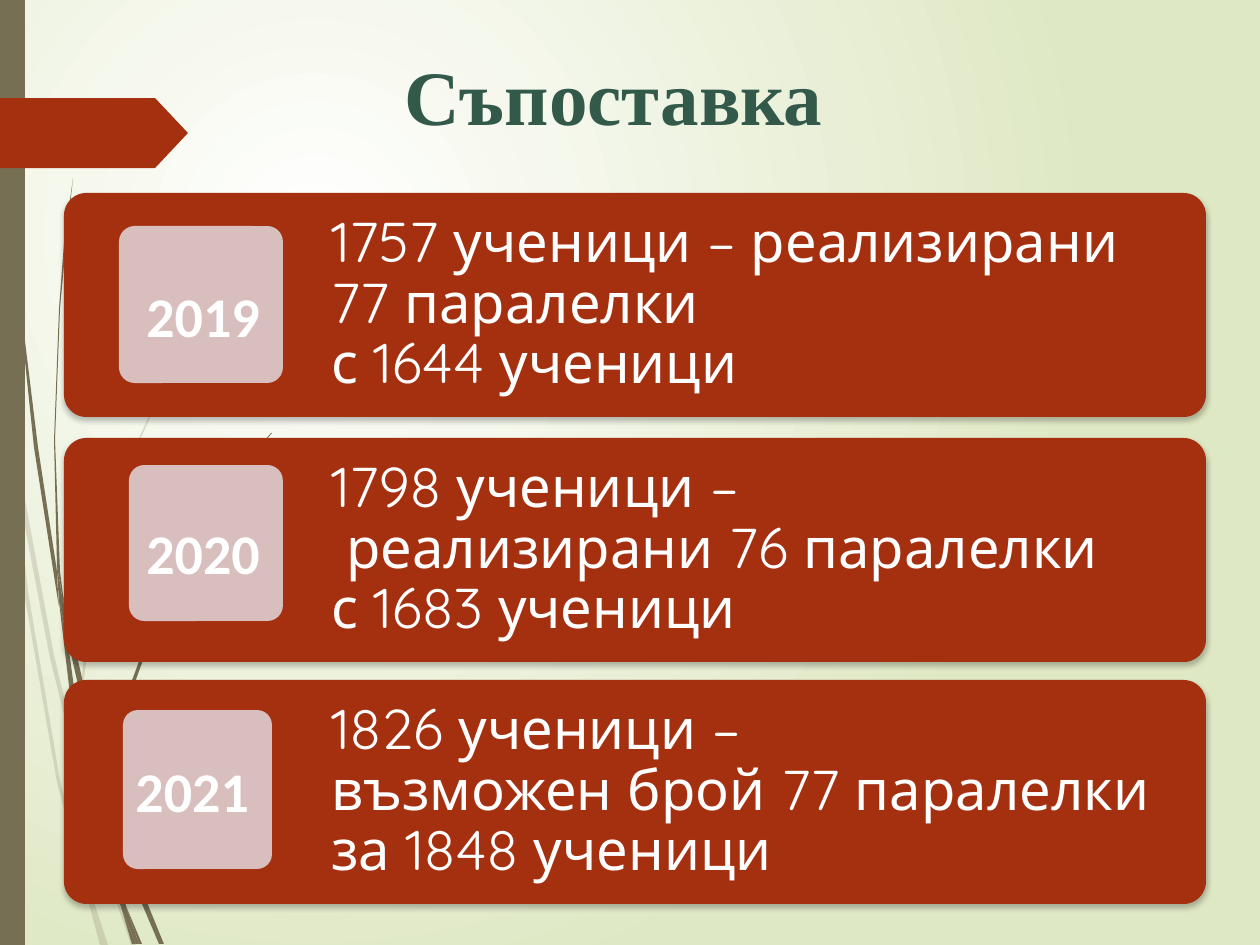
from dataclasses import dataclass

from lxml.etree import SubElement
from pptx import Presentation
from pptx.dml.color import RGBColor as RGB
from pptx.enum.shapes import MSO_SHAPE as Shape
from pptx.enum.text import MSO_ANCHOR as Anchor
from pptx.oxml import parse_xml
from pptx.oxml.ns import nsdecls, qn
from pptx.util import Emu, Pt

SCALE = 914400 / 126  # EMU per px
WIDTH, HEIGHT = 1260, 945


@dataclass(frozen=True)
class Theme:
    accent: str = "A53010"
    bark: str = "766F54"
    tile: str = "D8BEBD"
    title: str = "325949"
    light: str = "FFFFFF"
    meadow: str = "DFE8C4"
    title_font: str = "Times New Roman"
    body_font: str = "Quicksand"
    year_font: str = "Calibri"
    title_size: int = 44
    body_size: int = 32


THEME = Theme()

FAINT_STEMS = [
    [(10, 441), (8, 406), (0, 355), (0, 377), (9, 433)],
    [(50, 658), (74, 755), (74, 738), (54, 655), (13, 435), (15, 474)],
    [(81, 765), (77, 751), (77, 769), (107, 874), (131, 945), (136, 945), (111, 872)],
    [(105, 945), (108, 945), (92, 896)],
    [(81, 861), (60, 780), (28, 591), (15, 474), (10, 441), (24, 592), (57, 782),
     (81, 873), (88, 900), (87, 891)],
    [(77, 736), (96, 582), (140, 440), (200, 309), (236, 249), (253, 220), (273, 194),
     (273, 193), (253, 219), (234, 248), (199, 307), (139, 438), (94, 581), (74, 736),
     (74, 738), (77, 751)],
    [(88, 900), (100, 945), (103, 945)],
    [(84, 872), (82, 861), (87, 891), (88, 900), (103, 945), (105, 945), (92, 896)],
]
DARK_STEMS = [
    [(6, 139), (18, 294), (34, 447), (58, 601), (59, 606), (57, 576), (57, 571),
     (38, 447), (19, 292), (8, 137), (5, 60), (4, 0), (3, 0), (4, 60)],
    [(92, 746), (111, 813), (111, 795), (97, 743), (63, 595), (67, 636)],
    [(118, 818), (115, 808), (115, 827), (137, 892), (159, 944), (164, 944), (142, 890)],
    [(115, 871), (102, 828), (76, 701), (67, 636), (59, 601), (71, 702), (97, 830),
     (116, 892), (122, 910), (121, 903)],
    [(63, 595), (60, 571), (55, 440), (60, 309), (66, 243), (73, 178), (64, 243),
     (59, 309), (54, 440), (57, 566), (62, 595)],
    [(139, 944), (142, 944), (126, 906)],
    [(59, 601), (67, 636), (63, 595), (62, 595), (57, 566), (57, 571)],
    [(115, 798), (130, 696), (165, 600), (213, 512), (241, 471), (256, 452), (272, 433),
     (271, 433), (256, 451), (241, 470), (212, 510), (163, 597), (127, 694), (111, 795),
     (115, 808)],
    [(122, 910), (132, 944), (136, 944)],
    [(111, 813), (115, 871), (121, 890), (126, 906), (126, 902), (115, 827), (113, 820)],
    [(121, 890), (115, 871), (121, 903), (122, 910), (136, 944), (139, 944), (126, 906)],
]

# year, panel top, tile box and label box within the panel, lines of text
PANELS = [
    ("2019", 193, (55, 33, 164, 157), (70, 82, 149, 81),
     ["1757 ученици – реализирани 77 паралелки", "с 1644 ученици"]),
    ("2020", 438, (65, 27, 154, 156), (70, 74, 149, 81),
     ["1798 ученици –", " реализирани 76 паралелки", "с 1683 ученици"]),
    ("2021", 680, (59, 30, 149, 159), (59, 70, 159, 81),
     ["1826 ученици –", "възможен брой 77 паралелки", "за 1848 ученици"]),
]


def px(n):
    return Emu(round(n * SCALE))


def paint(sp, color):
    sp.shadow.inherit = False
    sp.fill.solid()
    sp.fill.fore_color.rgb = RGB.from_string(color)
    sp.line.fill.background()


def add_block(s, kind, box, color, adj=None):
    sp = s.shapes.add_shape(kind, *map(px, box))
    if adj is not None:
        sp.adjustments[0] = adj
    paint(sp, color)
    return sp


def add_text(s, box, lines, font, size, color, bold=False, anchor=Anchor.TOP):
    tf = s.shapes.add_textbox(*map(px, box)).text_frame
    tf.word_wrap = True
    tf.vertical_anchor = anchor
    for i, line in enumerate(lines):
        p = tf.paragraphs[0] if i == 0 else tf.add_paragraph()
        p.text = line
        p.font.name, p.font.size, p.font.bold = font, Pt(size), bold
        p.font.color.rgb = RGB.from_string(color)
    return tf


def add_background(s):
    """Radial gradient from white to pale green."""
    stops = "".join(f'<a:gs pos="{pos}"><a:srgbClr val="{color}"/></a:gs>'
                    for pos, color in ((0, THEME.light), (100000, THEME.meadow)))
    bg = parse_xml(
        f'<p:bg {nsdecls("p", "a")}><p:bgPr><a:gradFill><a:gsLst>{stops}</a:gsLst>'
        '<a:path path="circle"><a:fillToRect l="50000" t="50000" r="100000" b="100000"/>'
        '</a:path></a:gradFill><a:effectLst/></p:bgPr></p:bg>')
    s.element.cSld.insert(0, bg)


def add_stems(s, stems, alpha=None):
    for start, *rest in stems:
        builder = s.shapes.build_freeform(*start, scale=SCALE)
        builder.add_line_segments(rest, close=True)
        sp = builder.convert_to_shape()
        paint(sp, THEME.bark)
        if alpha is not None:
            color = sp.element.spPr.find(f'{qn("a:solidFill")}/{qn("a:srgbClr")}')
            SubElement(color, qn("a:alpha"), val=str(alpha * 1000))


def add_side_decor(s):
    add_stems(s, FAINT_STEMS, alpha=20)
    add_stems(s, DARK_STEMS)
    add_block(s, Shape.RECTANGLE, (0, 0, 25, HEIGHT), THEME.bark)
    add_block(s, Shape.PENTAGON, (0, 98, 188, 70), THEME.accent, adj=0.47)


def add_drop_shadow(sp):
    effects = sp.element.spPr.find(qn("a:effectLst"))
    effects.append(parse_xml(
        f'<a:outerShdw {nsdecls("a")} blurRad="{Pt(3)}" dist="{Pt(2)}" dir="5400000" '
        'rotWithShape="0"><a:srgbClr val="000000"><a:alpha val="25000"/></a:srgbClr>'
        '</a:outerShdw>'))


def add_panel(s, box, year, tile, label, lines):
    """Red panel with its text and a year tile, both placed from the panel's corner."""
    x, y, w, h = box

    def inside(part):
        left, top, *size = part
        return x + left, y + top, *size

    add_drop_shadow(add_block(s, Shape.ROUNDED_RECTANGLE, box, THEME.accent, adj=0.1))
    indent = 251
    tf = add_text(s, inside((indent, 0, w - indent, h)), lines, THEME.body_font,
                  THEME.body_size, THEME.light, anchor=Anchor.MIDDLE)
    tf.margin_left = tf.margin_right = tf.margin_top = tf.margin_bottom = px(16)
    for p in tf.paragraphs:
        p.line_spacing = 0.9
    add_block(s, Shape.ROUNDED_RECTANGLE, inside(tile), THEME.tile, adj=0.1)
    add_text(s, inside(label), [year], THEME.year_font, THEME.body_size, THEME.light,
             bold=True)


def main():
    prs = Presentation()
    prs.slide_width, prs.slide_height = px(WIDTH), px(HEIGHT)
    s = prs.slides.add_slide(prs.slide_layouts[6])
    add_background(s)
    add_side_decor(s)
    add_text(s, (392, 37, 486, 110), ["Съпоставка"], THEME.title_font,
             THEME.title_size, THEME.title, bold=True, anchor=Anchor.BOTTOM)
    for year, top, tile, label, lines in PANELS:
        add_panel(s, (64, top, 1142, 224), year, tile, label, lines)
    prs.save("out.pptx")


if __name__ == "__main__":
    main()
